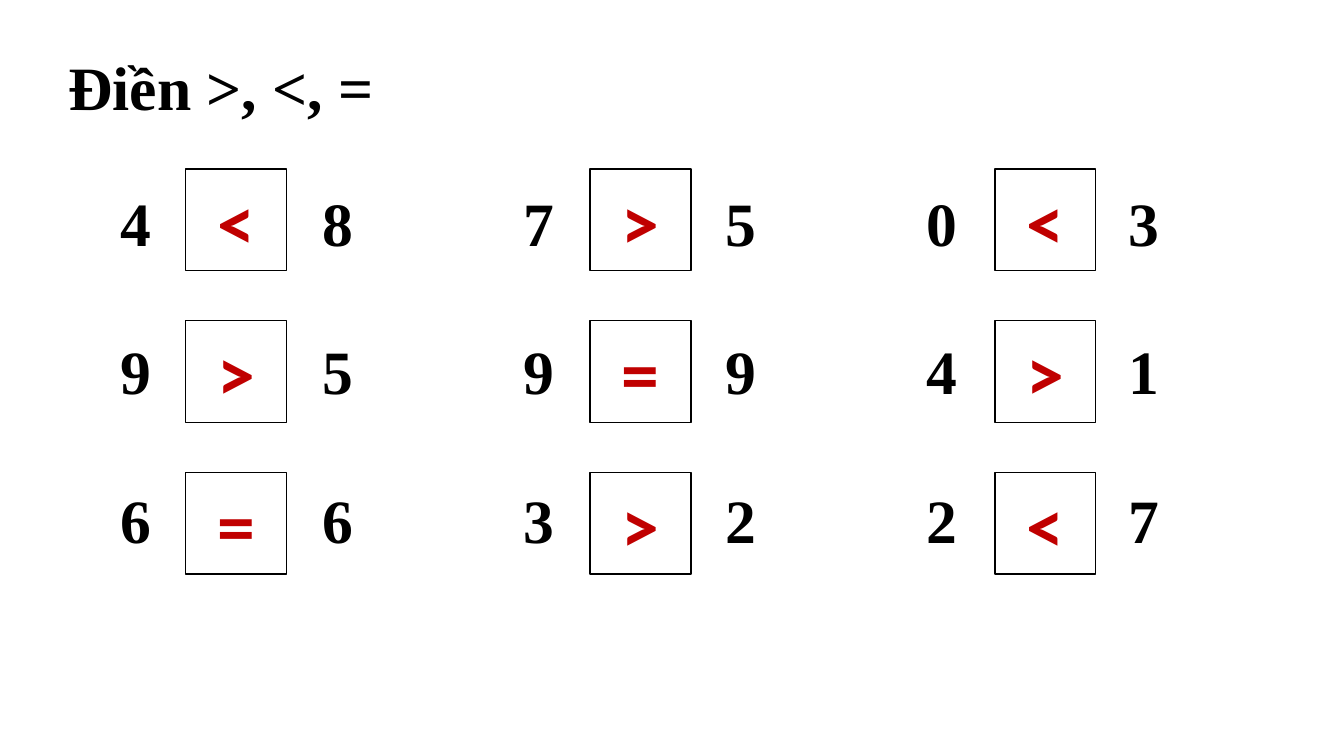
from lxml.etree import SubElement
from pptx import Presentation
from pptx.dml.color import RGBColor
from pptx.enum.shapes import MSO_SHAPE
from pptx.enum.text import PP_ALIGN
from pptx.oxml.ns import qn
from pptx.util import Pt

COLORS = {"ink": "000000", "answer": "C00000", "box": "FFFFFF"}
EXERCISES = [
    ["4<8", "7>5", "0<3"],
    ["9>5", "9=9", "4>1"],
    ["6=6", "3>2", "2<7"],
]


def color(name):
    """Return the named colour."""
    return RGBColor.from_string(COLORS[name])


def write(p, text, font="Times New Roman", size=44, ink="ink", align=PP_ALIGN.LEFT, before=0):
    """Write bold text into a paragraph."""
    p.alignment = align
    p.space_before = Pt(before)
    r = p.add_run()
    r.text = text
    r.font.name = font
    r.font.size = Pt(size)
    r.font.bold = True
    r.font.color.rgb = color(ink)


def set_tabs(p, step, count):
    """Give a paragraph evenly spaced left tab stops."""
    tabs = SubElement(p._p.get_or_add_pPr(), qn("a:tabLst"))
    for k in range(1, count + 1):
        SubElement(tabs, qn("a:tab"), pos=str(Pt(k * step)), algn="l")


def add_title(s, x, y, w, h):
    """Place the heading."""
    tf = s.shapes.add_textbox(Pt(x), Pt(y), Pt(w), Pt(h)).text_frame
    tf.word_wrap = False
    write(tf.paragraphs[0], "Điền >, <, =")


def add_numbers(s, x, y, w, h):
    """Place the rows of numbers, spread by tabs."""
    tf = s.shapes.add_textbox(Pt(x), Pt(y), Pt(w), Pt(h)).text_frame
    tf.word_wrap = True
    for i, row in enumerate(EXERCISES):
        p = tf.add_paragraph() if i else tf.paragraphs[0]
        numbers = [n for exercise in row for n in (exercise[0], exercise[2])]
        write(p, "\t".join(numbers), before=53.2 if i else 0)
        set_tabs(p, 144, len(numbers) - 1)


def add_answer(s, x, y, w, h, sign):
    """Place one framed comparison sign."""
    sp = s.shapes.add_shape(MSO_SHAPE.RECTANGLE, Pt(x), Pt(y), Pt(w), Pt(h))
    sp.shadow.inherit = False
    sp.fill.solid()
    sp.fill.fore_color.rgb = color("box")
    sp.line.color.rgb = color("ink")
    sp.line.width = Pt(1)
    write(sp.text_frame.paragraphs[0], sign, font="Calibri", size=54,
          ink="answer", align=PP_ALIGN.CENTER)


def add_answers(s, x, y, w, h):
    """Place the grid of answers so that it fills the box."""
    box_w, box_h = 72, 72.7
    step_x, step_y = (w - box_w) / 2, (h - box_h) / 2
    for i, row in enumerate(EXERCISES):
        for j, exercise in enumerate(row):
            add_answer(s, x + j * step_x, y + i * step_y, box_w, box_h, exercise[1])


def main():
    """Build and save the slide."""
    prs = Presentation()
    prs.slide_width, prs.slide_height = Pt(960), Pt(540)
    s = prs.slides.add_slide(prs.slide_layouts[6])
    add_title(s, 41.8, 31.4, 235, 60.5)
    add_numbers(s, 79, 128.6, 801.5, 273.5)
    add_answers(s, 132.5, 120.7, 650.2, 289.4)
    prs.save("out.pptx")


if __name__ == "__main__":
    main()
